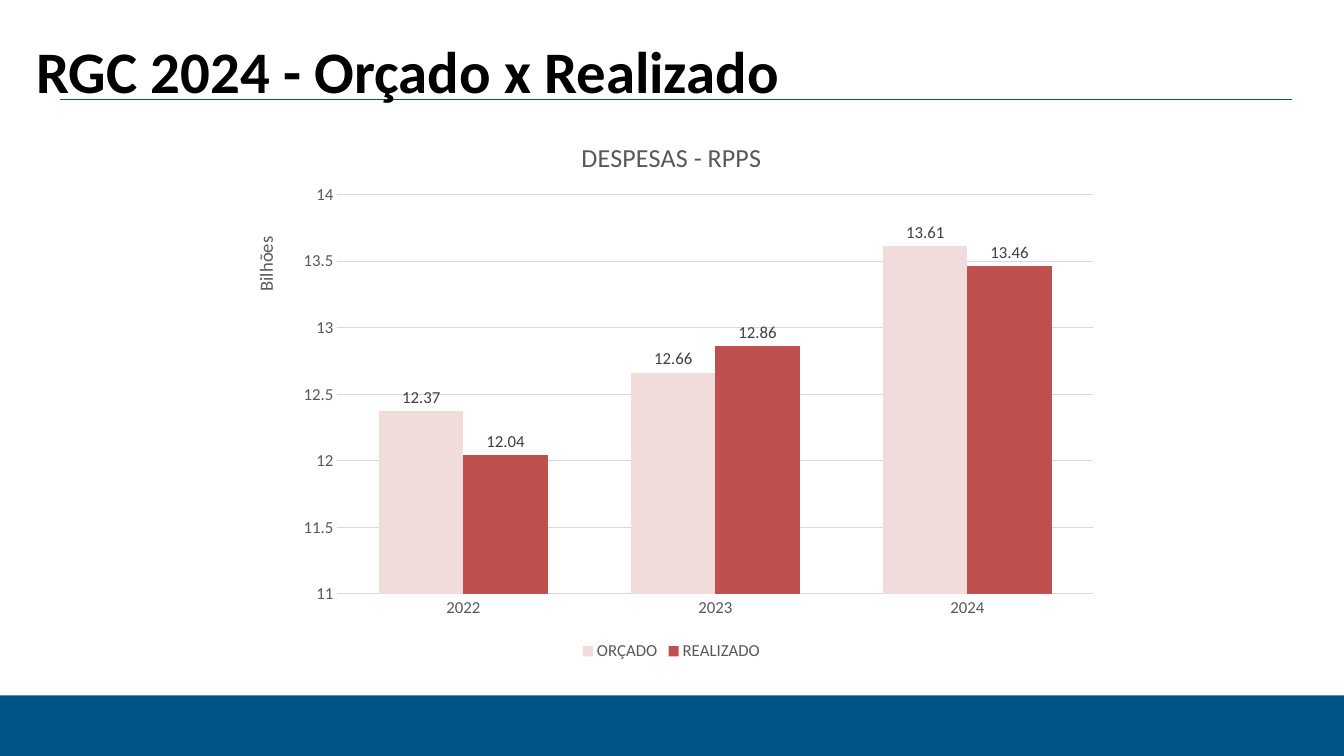
from lxml import etree
from pptx import Presentation
from pptx.chart.data import CategoryChartData
from pptx.dml.color import RGBColor
from pptx.enum.chart import XL_CHART_TYPE as ChartType
from pptx.enum.chart import XL_LABEL_POSITION as LabelPosition
from pptx.enum.chart import XL_LEGEND_POSITION as LegendPosition
from pptx.enum.chart import XL_TICK_MARK as TickMark
from pptx.enum.shapes import MSO_CONNECTOR as Connector
from pptx.enum.shapes import MSO_SHAPE as Shape
from pptx.oxml import parse_xml
from pptx.oxml.ns import nsdecls, qn
from pptx.util import Inches, Pt

BLUE = RGBColor(0x00, 0x53, 0x86)
BLACK = RGBColor(0x00, 0x00, 0x00)
GRAY = RGBColor(0x59, 0x59, 0x59)
DARK_GRAY = RGBColor(0x40, 0x40, 0x40)
LIGHT_GRAY = RGBColor(0xD9, 0xD9, 0xD9)
PINK = RGBColor(0xF2, 0xDC, 0xDB)
RED = RGBColor(0xC0, 0x50, 0x4D)
FONT = "Calibri"

YEARS = ["2022", "2023", "2024"]
EXPENSES = [
    ("ORÇADO", [12.37, 12.66, 13.61], PINK),
    ("REALIZADO", [12.04, 12.86, 13.46], RED),
]


def set_font(font, size, color=GRAY, bold=False):
    font.name = FONT
    font.size = Pt(size)
    font.bold = bold
    font.color.rgb = color


def write_text(frame, text, **style):
    para = frame.paragraphs[0]
    span = para.add_run()
    span.text = text
    set_font(span.font, **style)


def add_footer_bar(page):
    bar = page.shapes.add_shape(
        Shape.RECTANGLE, Inches(0), Inches(6.9), Inches(13.33), Inches(0.6))
    bar.shadow.inherit = False
    bar.fill.solid()
    bar.fill.fore_color.rgb = BLUE
    bar.line.fill.background()


def add_rule(page):
    rule = page.shapes.add_connector(
        Connector.STRAIGHT, Inches(0.6), Inches(0.99), Inches(12.81), Inches(0.99))
    rule.line.color.rgb = BLUE
    rule.line.width = Pt(0.75)
    properties = rule._element.find(qn("p:spPr"))
    etree.SubElement(properties, qn("a:effectLst"))


def add_heading(page, text):
    box = page.shapes.add_textbox(Inches(0.33), Inches(0.33), Inches(8.81), Inches(0.72))
    frame = box.text_frame
    frame.word_wrap = True
    frame.margin_left = frame.margin_right = frame.margin_bottom = 0
    frame.margin_top = Inches(0.01)
    write_text(frame, text, size=42, color=BLACK, bold=True)
    frame.paragraphs[0]._p.get_or_add_pPr().set("marL", str(Inches(0.03)))


def layout_xml(**settings):
    entries = "".join(f'<c:{name} val="{value}"/>' for name, value in settings.items())
    return parse_xml(
        f'<c:layout {nsdecls("c")}><c:manualLayout>{entries}</c:manualLayout></c:layout>')


def place_plot(chart):
    plot_area = chart._chartSpace.chart.plotArea
    for layout in plot_area.findall(qn("c:layout")):
        plot_area.remove(layout)
    plot_area.insert(0, layout_xml(
        layoutTarget="inner", xMode="edge", yMode="edge", x=0.12, y=0.14, w=0.86, h=0.73))


def place_axis_title(title):
    element = title._element
    for layout in element.findall(qn("c:layout")):
        element.remove(layout)
    element.find(qn("c:tx")).addnext(
        layout_xml(xMode="edge", yMode="edge", x=0.02, y=0.21))


def format_axes(chart):
    years, amounts = chart.category_axis, chart.value_axis
    for axis in (years, amounts):
        axis.major_tick_mark = axis.minor_tick_mark = TickMark.NONE
        set_font(axis.tick_labels.font, 12)
    years.format.line.color.rgb = LIGHT_GRAY
    years.format.line.width = Pt(0.75)
    amounts.minimum_scale, amounts.maximum_scale, amounts.major_unit = 11, 14, 0.5
    amounts.format.line.fill.background()
    amounts.major_gridlines.format.line.color.rgb = LIGHT_GRAY
    amounts.major_gridlines.format.line.width = Pt(0.75)
    title = amounts.axis_title
    write_text(title.text_frame, "Bilhões", size=13.3)
    body = title.text_frame._txBody.find(qn("a:bodyPr"))
    body.set("rot", "-5400000")
    body.set("vert", "horz")
    place_axis_title(title)


def format_series(chart):
    plot = chart.plots[0]
    plot.gap_width = 99
    plot.overlap = 0
    plot.vary_by_categories = False
    for series, (_, _, color) in zip(plot.series, EXPENSES):
        series.format.fill.solid()
        series.format.fill.fore_color.rgb = color
        series.invert_if_negative = False
        labels = series.data_labels
        labels.show_value = True
        labels.position = LabelPosition.OUTSIDE_END
        set_font(labels.font, 12, DARK_GRAY)


def add_expense_chart(page):
    data = CategoryChartData()
    data.categories = YEARS
    for name, values, _ in EXPENSES:
        data.add_series(name, values)
    chart = page.shapes.add_chart(
        ChartType.COLUMN_CLUSTERED, Inches(2.3), Inches(1.17),
        Inches(8.72), Inches(5.43), data).chart
    set_font(chart.font, 10, BLACK)
    chart.has_title = True
    write_text(chart.chart_title.text_frame, "DESPESAS - RPPS", size=18.6)
    chart.chart_title.include_in_layout = False
    chart.has_legend = True
    chart.legend.position = LegendPosition.BOTTOM
    chart.legend.include_in_layout = False
    set_font(chart.legend.font, 12)
    format_axes(chart)
    format_series(chart)
    place_plot(chart)


def main():
    deck = Presentation()
    deck.slide_width, deck.slide_height = Inches(13.33), Inches(7.5)
    page = deck.slides.add_slide(deck.slide_layouts[6])
    add_footer_bar(page)
    add_rule(page)
    add_heading(page, "RGC 2024 - Orçado x Realizado")
    add_expense_chart(page)
    deck.save("out.pptx")


if __name__ == "__main__":
    main()
